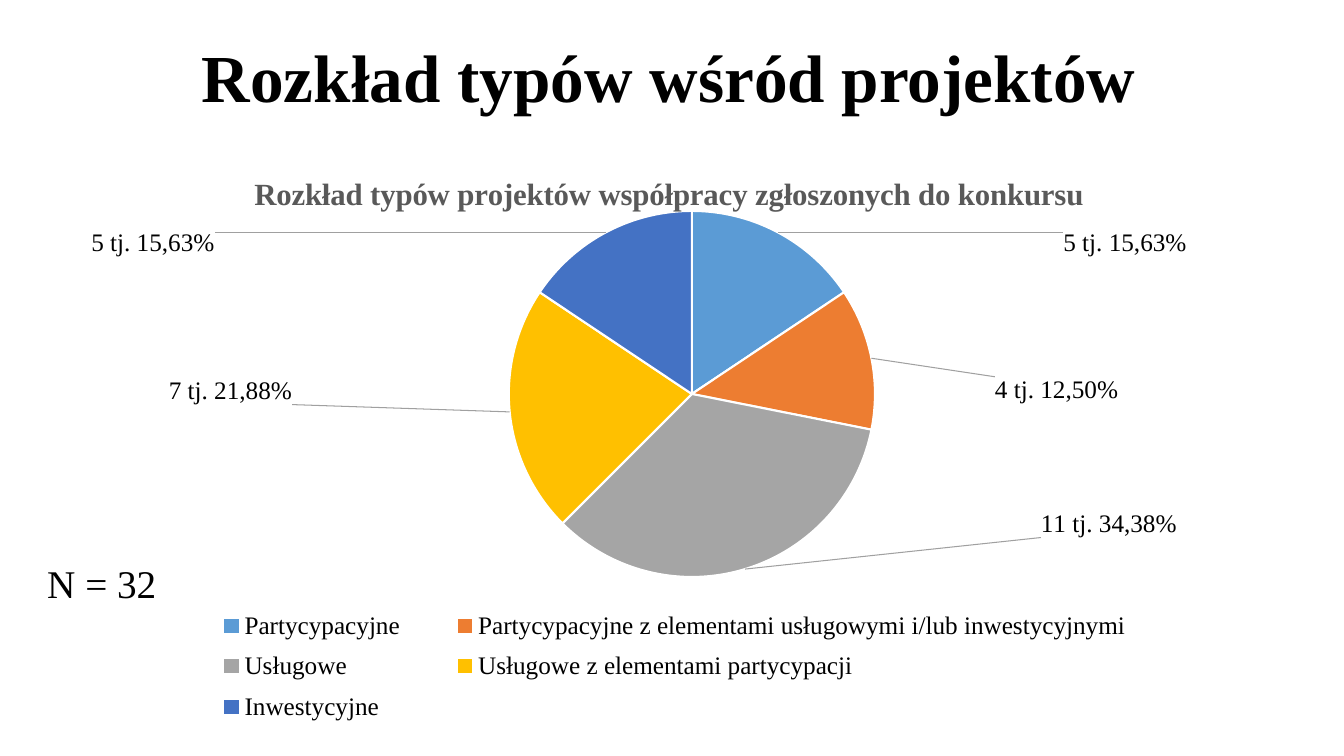
import dataclasses
import lxml.etree
import pptx
import pptx.chart.data
import pptx.dml.color
import pptx.enum.chart
import pptx.enum.text
import pptx.oxml
import pptx.oxml.ns
import pptx.util

Inches = pptx.util.Inches
qn = pptx.oxml.ns.qn


@dataclasses.dataclass(frozen=True)
class Theme:
    font: str = "Times New Roman"
    ink: str = "000000"
    muted: str = "595959"
    leader: str = "A0A0A0"
    paper: str = "FFFFFF"
    title_size: int = 48
    note_size: int = 28
    chart_title_size: int = 22
    label_size: int = 18


THEME = Theme()

PROJECT_TYPES = [
    ("Partycypacyjne", 5, "5 tj. 15,63%", "5B9BD5", (0.24, 0.05)),
    ("Partycypacyjne z elementami usługowymi i/lub inwestycyjnymi",
     4, "4 tj. 12,50%", "ED7D31", (0.1, 0.08)),
    ("Usługowe", 11, "11 tj. 34,38%", "A5A5A5", (0.25, -0.11)),
    ("Usługowe z elementami partycypacji", 7, "7 tj. 21,88%", "FFC000", (-0.18, -0.06)),
    ("Inwestycyjne", 5, "5 tj. 15,63%", "4472C4", (-0.33, 0.05)),
]


def rgb(value):
    return pptx.dml.color.RGBColor.from_string(value)


def style_font(font, size, color=THEME.ink, bold=False):
    font.name = THEME.font
    font.size = pptx.util.Pt(size)
    font.bold = bold
    font.color.rgb = rgb(color)


def add_text(page, box, text, size, bold=False, centred=False):
    frame = page.shapes.add_textbox(*map(Inches, box)).text_frame
    frame.word_wrap = True
    frame.text = text
    para = frame.paragraphs[0]
    style_font(para.runs[0].font, size, bold=bold)
    if centred:
        frame.vertical_anchor = pptx.enum.text.MSO_ANCHOR.MIDDLE
        para.alignment = pptx.enum.text.PP_ALIGN.CENTER
        para.line_spacing = 0.9


def manual_layout(target=None, **places):
    layout = lxml.etree.Element(qn("c:layout"))
    manual = lxml.etree.SubElement(layout, qn("c:manualLayout"))
    if target:
        lxml.etree.SubElement(manual, qn("c:layoutTarget"), val=target)
    if "w" in places:
        for mode in ("xMode", "yMode"):
            lxml.etree.SubElement(manual, qn("c:" + mode), val="edge")
    for key, value in places.items():
        lxml.etree.SubElement(manual, qn("c:" + key), val=str(value))
    return layout


def place(parent, after, layout):
    for old in parent.findall(qn("c:layout")):
        parent.remove(old)
    if after is None:
        parent.insert(0, layout)
    else:
        parent.find(qn(after)).addnext(layout)


def add_leader_lines(labels_xml):
    show = labels_xml.find(qn("c:showLeaderLines"))
    if show is None:
        show = lxml.etree.SubElement(labels_xml, qn("c:showLeaderLines"))
    show.set("val", "1")
    show.addnext(pptx.oxml.parse_xml(
        f'<c:leaderLines {pptx.oxml.ns.nsdecls("c", "a")}><c:spPr><a:ln w="9525"><a:solidFill>'
        f'<a:srgbClr val="{THEME.leader}"/></a:solidFill></a:ln></c:spPr></c:leaderLines>'))


def style_slices(series):
    labels = series.data_labels
    labels.show_value = True
    labels.show_percentage = True
    style_font(labels.font, THEME.label_size)
    for index, (_, _, text, color, (shift_x, shift_y)) in enumerate(PROJECT_TYPES):
        point = series.points[index]
        point.format.fill.solid()
        point.format.fill.fore_color.rgb = rgb(color)
        point.format.line.color.rgb = rgb(THEME.paper)
        point.format.line.width = pptx.util.Pt(1.5)
        label = point.data_label
        label.text_frame.text = text
        style_font(label.text_frame.paragraphs[0].runs[0].font, THEME.label_size)
        label.position = pptx.enum.chart.XL_LABEL_POSITION.OUTSIDE_END
    labels_xml = series._element.find(qn("c:dLbls"))
    for label_xml, entry in zip(labels_xml.findall(qn("c:dLbl")), PROJECT_TYPES):
        shift_x, shift_y = entry[-1]
        place(label_xml, "c:idx", manual_layout(x=shift_x, y=shift_y))
    add_leader_lines(labels_xml)


def add_type_pie(page, box):
    data = pptx.chart.data.CategoryChartData()
    data.categories = [entry[0] for entry in PROJECT_TYPES]
    data.add_series("Series 1", [entry[1] for entry in PROJECT_TYPES])
    chart = page.shapes.add_chart(
        pptx.enum.chart.XL_CHART_TYPE.PIE, *map(Inches, box), data).chart
    style_font(chart.font, THEME.label_size)
    chart.has_title = True
    title = chart.chart_title
    title.include_in_layout = False
    title.text_frame.text = "Rozkład typów projektów współpracy zgłoszonych do konkursu"
    style_font(title.text_frame.paragraphs[0].runs[0].font,
               THEME.chart_title_size, THEME.muted, bold=True)
    chart.has_legend = True
    legend = chart.legend
    legend.position = pptx.enum.chart.XL_LEGEND_POSITION.BOTTOM
    legend.include_in_layout = False
    style_font(legend.font, THEME.label_size)
    place(legend._element, "c:legendPos", manual_layout(x=0.08, y=0.76, w=0.85, h=0.23))
    plot_area = chart._chartSpace.chart.plotArea
    place(plot_area, None, manual_layout("inner", x=0.093, y=0.1, w=0.853, h=0.623))
    chart.plots[0].vary_by_categories = True
    style_slices(chart.plots[0].series[0])


def add_distribution_slide(deck):
    page = deck.slides.add_slide(deck.slide_layouts[6])
    add_text(page, (0.8, 0.26, 11.67, 1.08), "Rozkład typów wśród projektów",
             THEME.title_size, bold=True, centred=True)
    add_type_pie(page, (0.8, 1.51, 11.67, 5.83))
    add_text(page, (0.37, 5.5, 1.71, 0.57), "N = 32", THEME.note_size)


def main():
    deck = pptx.Presentation()
    deck.slide_width = Inches(13.33)
    deck.slide_height = Inches(7.5)
    add_distribution_slide(deck)
    deck.save("out.pptx")


if __name__ == "__main__":
    main()
